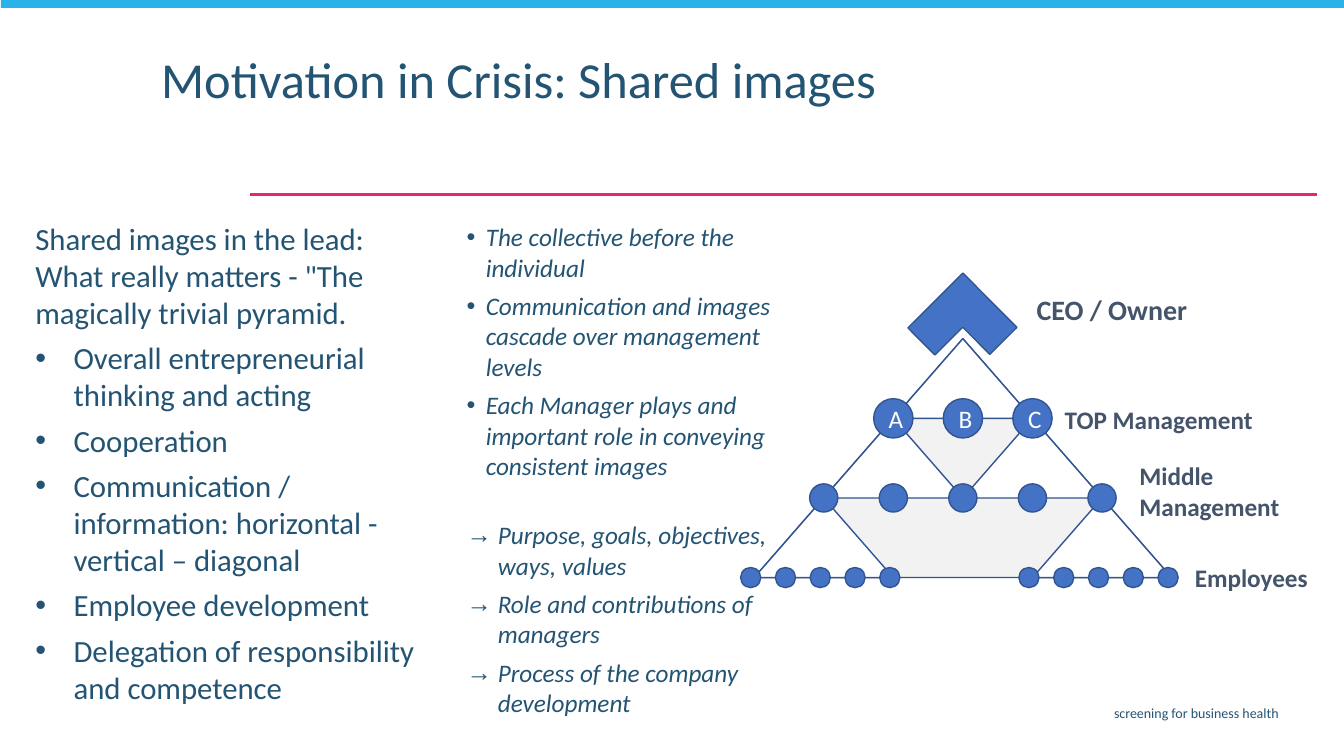
from lxml.etree import SubElement
from pptx import Presentation
from pptx.dml.color import RGBColor as Rgb
from pptx.enum.shapes import MSO_CONNECTOR as Link, MSO_SHAPE as Form
from pptx.enum.text import MSO_ANCHOR as Anchor, PP_ALIGN as Align
from pptx.oxml.ns import qn
from pptx.util import Inches, Pt

THEME = {
    "font": "Calibri",
    "ink": "245473", "label": "44546A", "white": "FFFFFF",
    "rule": "EC2179", "band": "29B3E8",
    "node": "4472C4", "edge": "325491", "pyramid": "F2F2F2",
    "title": 36, "body": 22, "ceo": 20, "detail": 18, "footer": 10,
}

deck = Presentation()
deck.slide_width, deck.slide_height = Inches(13.33), Inches(7.5)
slide = deck.slides.add_slide(deck.slide_layouts[6])


def write(left, top, width, height, items, size, color="ink", bold=False,
          italic=False, align=Align.LEFT, inset=(0.1, 0.05)):
    box = slide.shapes.add_textbox(*map(Inches, (left, top, width, height)))
    frame = box.text_frame
    frame.word_wrap = True
    frame.margin_left = frame.margin_right = Inches(inset[0])
    frame.margin_top = frame.margin_bottom = Inches(inset[1])
    for index, (text, bullet, indent, gap) in enumerate(items):
        line = frame.paragraphs[0] if index == 0 else frame.add_paragraph()
        line.text = text
        line.alignment = align
        if index:
            line.space_before = Pt(gap)
        if bullet:
            props = line._p.get_or_add_pPr()
            props.set("marL", str(Inches(indent)))
            props.set("indent", str(-Inches(indent)))
            SubElement(props, qn("a:buFont"), typeface="Arial")
            SubElement(props, qn("a:buChar"), char=bullet)
        font = line.runs[0].font
        font.name, font.size = THEME["font"], Pt(THEME[size])
        font.bold, font.italic = bold, italic
        font.color.rgb = Rgb.from_string(THEME[color])
    return frame


def draw(form, left, top, width, height, fill, edge="edge"):
    shape = slide.shapes.add_shape(form, *map(Inches, (left, top, width, height)))
    shape.shadow.inherit = False
    shape.fill.solid()
    shape.fill.fore_color.rgb = Rgb.from_string(THEME[fill])
    if edge:
        shape.line.color.rgb = Rgb.from_string(THEME[edge])
        shape.line.width = Pt(1)
    else:
        shape.line.fill.background()
    return shape


rule = slide.shapes.add_connector(
    Link.STRAIGHT, Inches(13.06), Inches(1.93), Inches(2.48), Inches(1.93))
rule.line.color.rgb = Rgb.from_string(THEME["rule"])
rule.line.width = Pt(1.5)
SubElement(rule._element.spPr, qn("a:effectLst"))

draw(Form.RECTANGLE, 0.01, -0.02, 13.34, 0.1, "band", None)
write(3.65, 6.94, 9.13, 0.29, [("screening for business health", None, 0, 0)],
      "footer", align=Align.RIGHT)

title = write(1.5, 0.5, 9.68, 0.76,
              [("Motivation in Crisis: Shared images", None, 0, 0)], "title")
title.paragraphs[0].line_spacing = 0.9

principles = [
    "Overall entrepreneurial thinking and acting",
    "Cooperation",
    "Communication / information: horizontal - vertical – diagonal",
    "Employee development",
    "Delegation of responsibility and competence",
]
intro = ('Shared images in the lead: What really matters - '
         '"The magically trivial pyramid.')
write(0.26, 2.14, 4.02, 5.28,
      [(intro, None, 0, 0)] + [(text, "•", 0.38, 6) for text in principles],
      "body", inset=(0.09, 0.04))

column, tier = 0.69, 0.79
base_left, apex_top = 7.48, 3.36

ceo = draw(Form.CORNER, 9.16, 2.87, 0.77, 0.76, "node")
ceo.rotation = 135.1
draw(Form.ISOSCELES_TRIANGLE, base_left, apex_top, 6 * column, 3 * tier, "pyramid")
for step, level in [(2, 0), (3, 1), (4, 2), (0, 2), (1, 1)]:
    draw(Form.ISOSCELES_TRIANGLE, base_left + step * column,
         apex_top + level * tier, 2 * column, tier, "white")

for text, left, top, width, height, size in [
    ("CEO / Owner", 10.24, 2.88, 2.49, 0.37, "ceo"),
    ("TOP Management", 10.52, 3.99, 2.4, 0.34, "detail"),
    ("Middle Management", 11.26, 4.55, 2.01, 0.64, "detail"),
    ("Employees", 11.81, 5.56, 1.39, 0.34, "detail"),
]:
    write(left, top, width, height, [(text, None, 0, 0)], size, "label",
          bold=True, inset=(0.04, 0.02))

top_managers = [(step, name) for step, name in zip((2, 3, 4), "ABC")]
middle_managers = [(step, "") for step in range(1, 6)]
employees = [(side + k / 2 - 0.05, "") for side in (0, 4) for k in range(5)]
for level, size, people in [(1, 0.39, top_managers), (2, 0.28, middle_managers),
                            (3, 0.2, employees)]:
    for step, name in people:
        person = draw(Form.OVAL, base_left + step * column - size / 2,
                      apex_top + level * tier - size / 2, size, size, "node")
        if name:
            frame = person.text_frame
            frame.word_wrap = False
            frame.vertical_anchor = Anchor.MIDDLE
            frame.margin_left = Inches(0.05)
            frame.margin_right = frame.margin_top = frame.margin_bottom = 0
            frame.text = name
            frame.paragraphs[0].alignment = Align.CENTER
            font = frame.paragraphs[0].runs[0].font
            font.name, font.size = THEME["font"], Pt(THEME["detail"])
            font.color.rgb = Rgb.from_string(THEME["white"])

write(4.53, 2.15, 3.23, 5.07, [
    ("The collective before the individual", "•", 0.19, 0),
    ("Communication and images cascade over management levels", "•", 0.19, 6),
    ("Each Manager plays and important role in conveying consistent images",
     "•", 0.19, 6),
    ("Purpose, goals, objectives, ways, values", "→", 0.31, 28),
    ("Role and contributions of managers", "→", 0.31, 6),
    ("Process of the company development", "→", 0.31, 6),
], "detail", italic=True)

deck.save("out.pptx")
